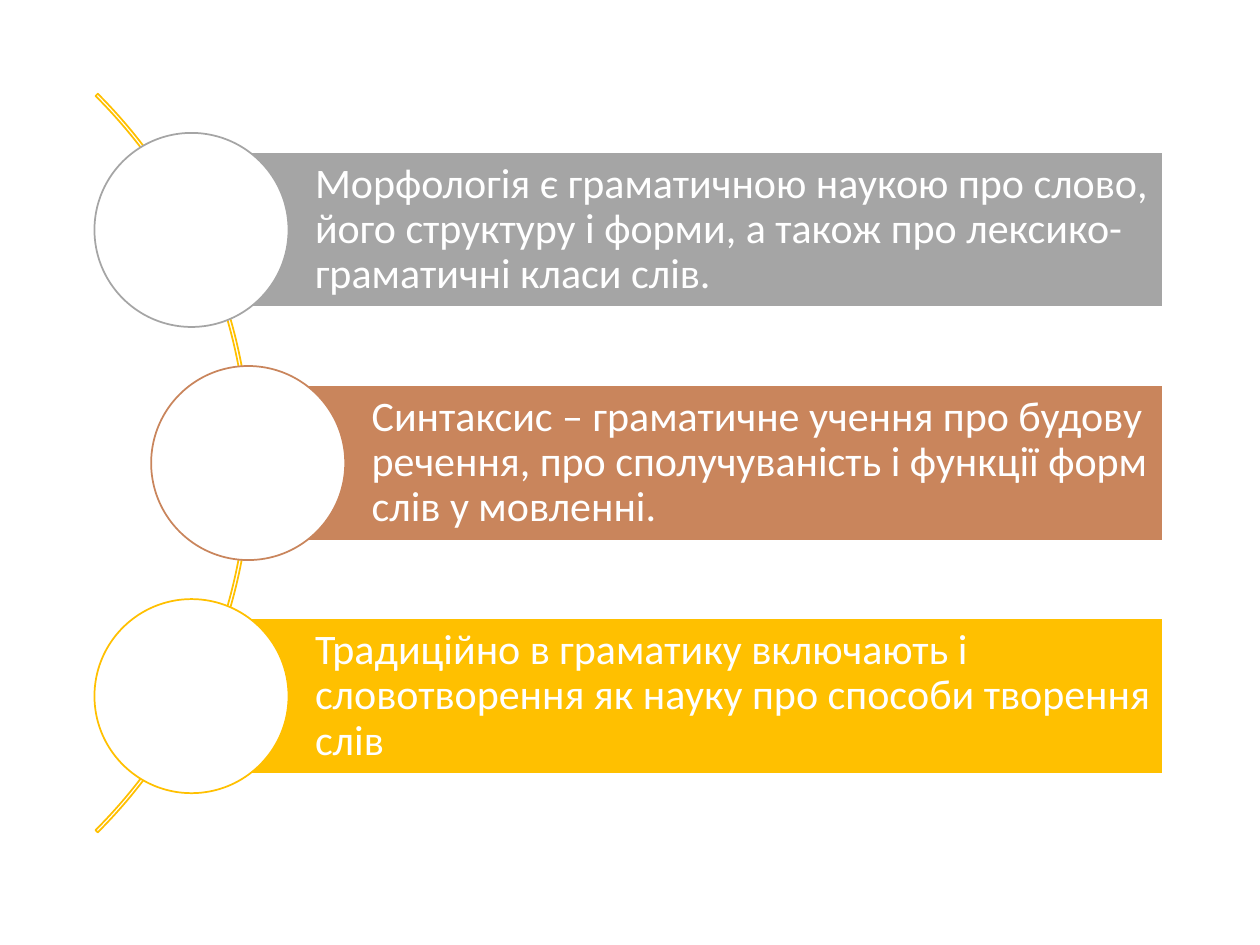
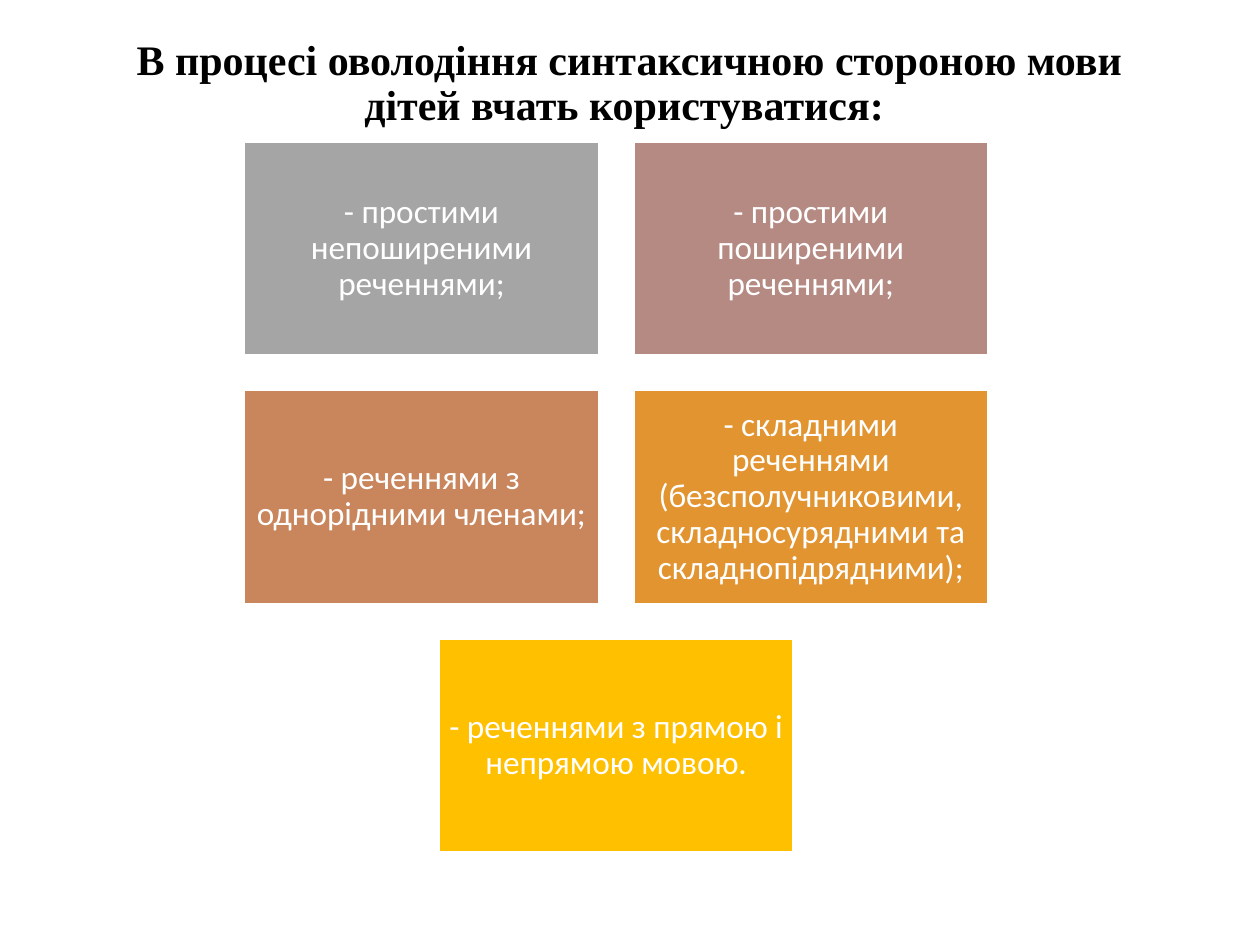
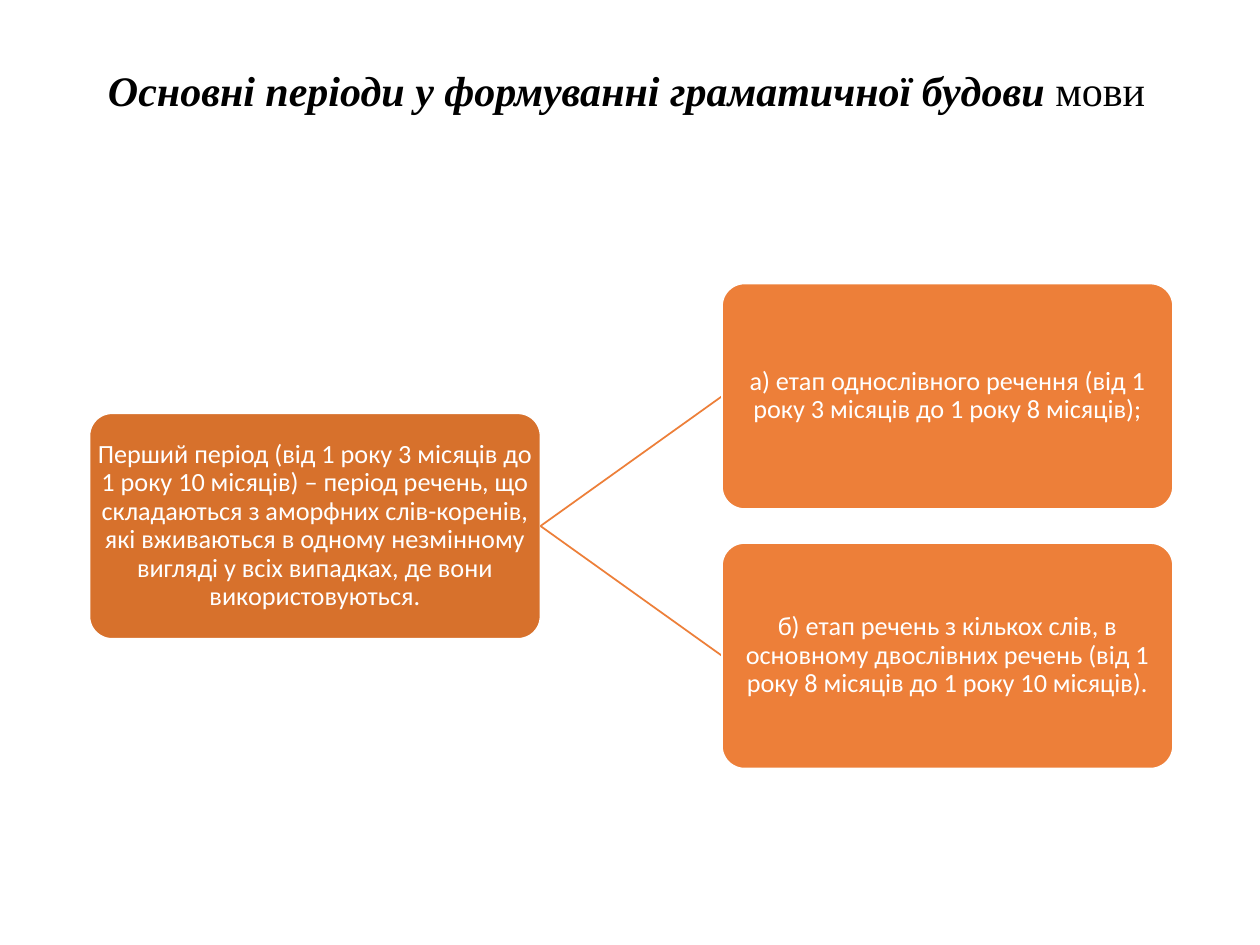
from lxml.etree import SubElement
from pptx import Presentation
from pptx.dml.color import RGBColor
from pptx.enum.shapes import MSO_CONNECTOR, MSO_SHAPE as Preset
from pptx.enum.text import MSO_ANCHOR, MSO_AUTO_SIZE, PP_ALIGN as Align
from pptx.oxml.ns import qn
from pptx.util import Inches, Pt

COLORS = {
    "white": "FFFFFF", "black": "000000", "gray": "A5A5A5", "rose": "B48A83",
    "clay": "C9855C", "amber": "E19430", "gold": "FFC000",
    "rust": "D7712C", "orange": "ED7F39",
}
RGB = {name: RGBColor.from_string(value) for name, value in COLORS.items()}
BODY_FONT, TITLE_FONT = "Calibri", "Times New Roman"

prs = Presentation()
prs.slide_width, prs.slide_height = Inches(10), Inches(7.5)
title_only, blank = prs.slide_layouts[5], prs.slide_layouts[6]


def add_panel(slide, preset, box, fill, line="white", text="", size=24,
              inset=0.08, left_inset=None, align=Align.CENTER):
    panel = slide.shapes.add_shape(preset, *map(Inches, box))
    panel.shadow.inherit = False
    if fill:
        panel.fill.solid()
        panel.fill.fore_color.rgb = RGB[fill]
    else:
        panel.fill.background()
    panel.line.color.rgb = RGB[line]
    panel.line.width = Pt(1)
    if text:
        frame = panel.text_frame
        frame.word_wrap = True
        frame.vertical_anchor = MSO_ANCHOR.MIDDLE
        frame.margin_left = Inches(left_inset or inset)
        frame.margin_right = frame.margin_top = frame.margin_bottom = Inches(inset)
        paragraph = frame.paragraphs[0]
        paragraph.text = text
        paragraph.alignment = align
        paragraph.line_spacing = 0.9
        paragraph.font.name, paragraph.font.size = BODY_FONT, Pt(size)
        paragraph.font.color.rgb = RGB["white"]
    return panel


def add_title(slide, box, runs):
    title = slide.shapes.title
    title.left, title.top, title.width, title.height = map(Inches, box)
    frame = title.text_frame
    frame.word_wrap = True
    frame.auto_size = MSO_AUTO_SIZE.NONE
    frame.vertical_anchor = MSO_ANCHOR.MIDDLE
    paragraph = frame.paragraphs[0]
    paragraph.alignment = Align.CENTER
    paragraph.line_spacing = 0.9
    paragraph.font.name, paragraph.font.size = TITLE_FONT, Pt(24)
    paragraph.font.color.rgb = RGB["black"]
    for text, bold, italic in runs:
        run = paragraph.add_run()
        run.text = text
        run.font.bold, run.font.italic = bold, italic


branches = prs.slides.add_slide(blank)
arc = add_panel(branches, Preset.BLOCK_ARC, (-6.3, -0.47, 8.29, 8.29), None, "gold")
for index, value in enumerate((189, 27, 0.003)):
    arc.adjustments[index] = value

definitions = [
    (1.52, "gray", "Морфологія є граматичною наукою про слово, його структуру і форми, "
     "а також про лексико-граматичні класи слів."),
    (1.97, "clay", "Синтаксис – граматичне учення про будову речення, "
     "про сполучуваність і функції форм слів у мовленні."),
    (1.52, "gold", "Традиційно в граматику включають і словотворення "
     "як науку про способи творення слів"),
]
bar_right, bar_height, circle_size = 9.23, 1.23, 1.54
for row, (left, color, definition) in enumerate(definitions):
    top = 1.21 + row * 1.85
    add_panel(branches, Preset.RECTANGLE, (left, top, bar_right - left, bar_height),
              color, text=definition, inset=0.07, left_inset=0.98, align=Align.LEFT)
    circle_top = top + (bar_height - circle_size) / 2
    add_panel(branches, Preset.OVAL,
              (left - circle_size / 2, circle_top, circle_size, circle_size),
              "white", color)

sentences = prs.slides.add_slide(title_only)
add_title(sentences, (0.71, -0.06, 8.57, 1.46), [
    ("В процесі оволодіння синтаксичною стороною мови дітей вчать користуватися: ",
     True, False)])
sentence_types = [
    ("gray", "- простими непоширеними реченнями;"),
    ("rose", "- простими поширеними реченнями;"),
    ("clay", "- реченнями з однорідними членами;"),
    ("amber", "- складними реченнями (безсполучниковими, складносурядними "
     "та складнопідрядними);"),
    ("gold", "- реченнями з прямою і непрямою мовою."),
]
tile_width, tile_height, gap = 2.81, 1.69, 0.28
for index, (color, sentence_type) in enumerate(sentence_types):
    row, column = divmod(index, 2)
    if index == len(sentence_types) - 1:
        column = 0.5
    add_panel(sentences, Preset.RECTANGLE,
              (1.94 + column * (tile_width + gap), 1.13 + row * (tile_height + gap),
               tile_width, tile_height), color, text=sentence_type, size=19)

periods = prs.slides.add_slide(title_only)
add_title(periods, (0.72, 0.37, 8.59, 0.74), [
    ("Основні періоди у формуванні граматичної будови ", True, True),
    ("мови ", False, False)])
period_left, stage_left, first_top, pitch = 0.71, 5.73, 2.25, 2.06
node_width, node_height = 3.58, 1.79
nodes = [
    (period_left, 0.5, "rust", "Перший період (від 1 року 3 місяців до 1 року 10 місяців) – "
     "період речень, що складаються з аморфних слів-коренів, які вживаються в одному "
     "незмінному вигляді у всіх випадках, де вони використовуються."),
    (stage_left, 0, "orange",
     "а) етап однослівного речення (від 1 року 3 місяців до 1 року 8 місяців);"),
    (stage_left, 1, "orange", "б) етап речень з кількох слів, в основному двослівних речень "
     "(від 1 року 8 місяців до 1 року 10 місяців)."),
]
period_middle = first_top + pitch / 2 + node_height / 2
for left, row, color, description in nodes:
    top = first_top + row * pitch
    if left == stage_left:
        link = periods.shapes.add_connector(
            MSO_CONNECTOR.STRAIGHT, Inches(period_left + node_width), Inches(period_middle),
            Inches(stage_left), Inches(top + node_height / 2))
        link.line.color.rgb = RGB["orange"]
        link.line.width = Pt(1)
        SubElement(link._element.spPr, qn("a:effectLst"))
    node = add_panel(periods, Preset.ROUNDED_RECTANGLE, (left, top, node_width, node_height),
                     color, text=description, size=15, inset=0.01)
    node.adjustments[0] = 0.1

prs.save("out.pptx")
